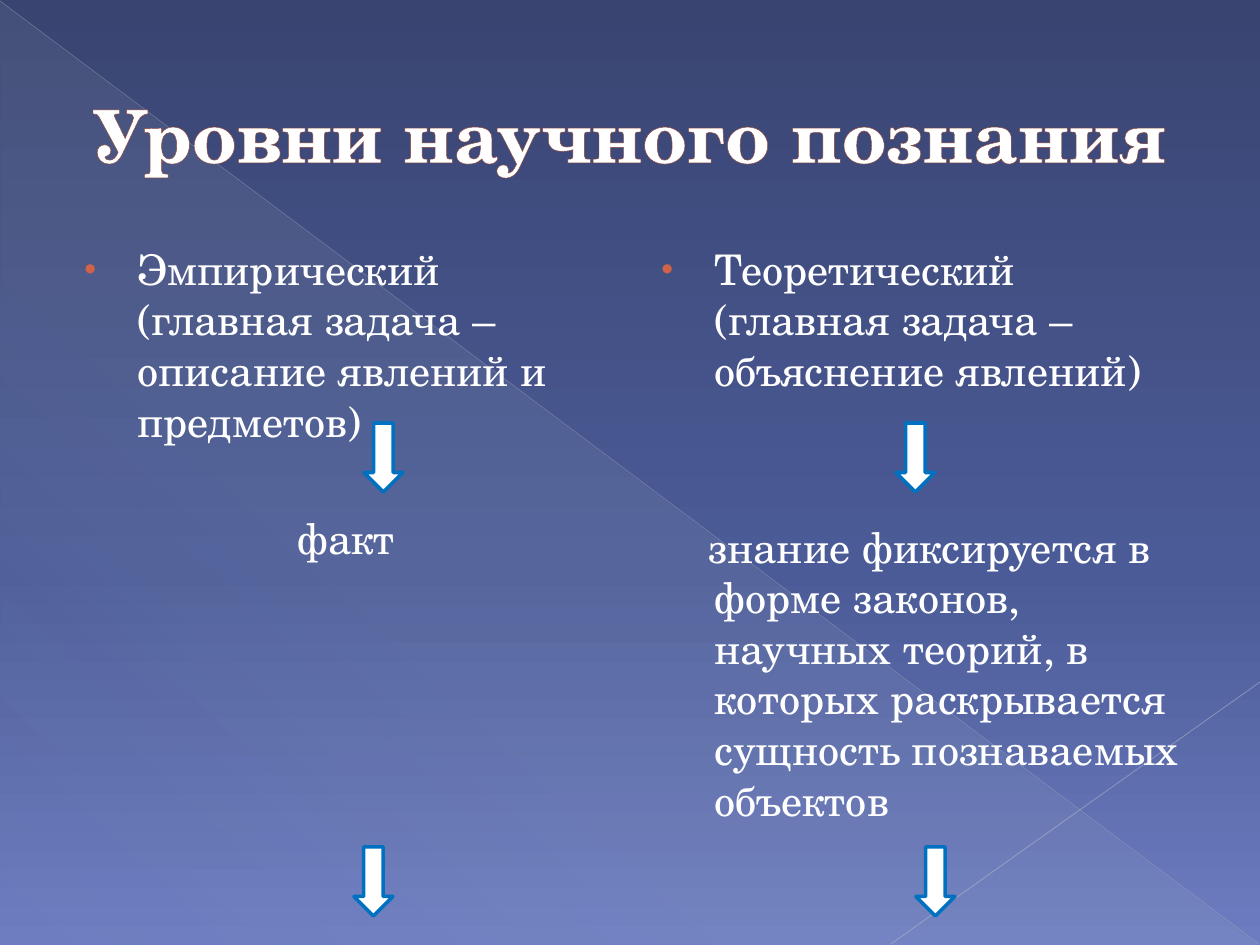
from lxml.etree import SubElement
from pptx import Presentation
from pptx.dml.color import RGBColor
from pptx.enum.shapes import MSO_CONNECTOR, MSO_SHAPE
from pptx.enum.text import MSO_ANCHOR, PP_ALIGN
from pptx.oxml.ns import qn
from pptx.util import Pt

EMU_PER_PX = 914400 / 126
FONT = "TeX Gyre Schola"
WHITE = RGBColor(0xFF, 0xFF, 0xFF)
ARROW_BLUE = RGBColor(0x00, 0x70, 0xC0)
BULLET_RED = RGBColor(0xD1, 0x63, 0x49)
TITLE_EDGE = RGBColor(0x91, 0x45, 0x33)
NIGHT = RGBColor(0x39, 0x44, 0x71)
INDIGO = RGBColor(0x4B, 0x5B, 0x97)
LAVENDER = RGBColor(0x6C, 0x7C, 0xC0)
MIST = RGBColor(0xC5, 0xD1, 0xD7)
LONG_RAY = RGBColor(0xBA, 0xBE, 0xCD)
SHORT_RAY = RGBColor(0xC2, 0xC5, 0xD2)

TITLE_FORMAT = {"name": FONT, "size": Pt(42), "bold": True}
BODY_FORMAT = {"name": FONT, "size": Pt(24.1)}
FRAME_FORMAT = {"word_wrap": True}
HANGING = {"marL": 62, "indent": -53}
FLUSH = {"marL": 62, "indent": -6}


def px(*lengths):
    return [round(length * EMU_PER_PX) for length in lengths]


def apply_format(target, values):
    for attribute, value in values.items():
        setattr(target, attribute, value)


def add_color(parent, color, opacity=100):
    swatch = SubElement(parent, qn("a:srgbClr"), val=str(color))
    if opacity < 100:
        SubElement(swatch, qn("a:alpha"), val=str(opacity * 1000))


def paint_gradient(fill, element, angle, stops):
    fill.gradient()
    fill.gradient_angle = 360 - angle
    stop_list = element.find(".//" + qn("a:gsLst"))
    for default_stop in list(stop_list):
        stop_list.remove(default_stop)
    for position, color, opacity in stops:
        stop = SubElement(stop_list, qn("a:gs"), pos=str(position * 1000))
        add_color(stop, color, opacity)


def add_glow(slide):
    glow = slide.shapes.add_shape(MSO_SHAPE.RIGHT_TRIANGLE, *px(1, 2, 1258, 943))
    glow.shadow.inherit = False
    glow.line.fill.background()
    paint_gradient(glow.fill, glow.element, 133,
                   [(0, MIST, 10), (70, MIST, 8), (100, MIST, 1)])


def add_ray(slide, ends, color, width, opacity):
    ray = slide.shapes.add_connector(MSO_CONNECTOR.STRAIGHT, *px(*ends))
    apply_format(ray.line, {"width": Pt(width)})
    ray.line.color.rgb = color
    swatch = ray.element.spPr.find(".//" + qn("a:srgbClr"))
    SubElement(swatch, qn("a:alpha"), val=str(opacity * 1000))
    SubElement(ray.element.spPr, qn("a:effectLst"))


def add_text_frame(slide, place, **extra):
    frame = slide.shapes.add_textbox(*px(*place)).text_frame
    apply_format(frame, FRAME_FORMAT | extra)
    return frame


def write_run(paragraph, text, values):
    run = paragraph.add_run()
    run.text = text
    apply_format(run.font, values)
    run.font.color.rgb = WHITE
    return run


def add_title(slide, text):
    frame = add_text_frame(slide, (63, 37, 1134, 193), vertical_anchor=MSO_ANCHOR.MIDDLE)
    heading = frame.paragraphs[0]
    heading.alignment = PP_ALIGN.CENTER
    properties = write_run(heading, text, TITLE_FORMAT).font._element
    edge = SubElement(properties, qn("a:ln"), w=str(Pt(0.5)))
    add_color(SubElement(edge, qn("a:solidFill")), TITLE_EDGE)
    properties.insert(0, edge)


def write_paragraph(paragraph, text, indents, values):
    apply_format(paragraph, values)
    properties = paragraph._p.get_or_add_pPr()
    for name, length in indents.items():
        properties.set(name, str(px(length)[0]))
    write_run(paragraph, text, BODY_FORMAT)
    return properties


def add_column(slide, left, level, result, result_indents, result_format):
    frame = add_text_frame(slide, (left, 237, 557, 624))
    properties = write_paragraph(frame.paragraphs[0], level, HANGING,
                                 {"space_before": Pt(4.8)})
    add_color(SubElement(properties, qn("a:buClr")), BULLET_RED)
    SubElement(properties, qn("a:buSzPct"), val="80000")
    SubElement(properties, qn("a:buFont"), typeface="Arial")
    SubElement(properties, qn("a:buChar"), char="•")
    write_paragraph(frame.add_paragraph(), result, result_indents, result_format)


def add_down_arrow(slide, left, top):
    arrow = slide.shapes.add_shape(MSO_SHAPE.DOWN_ARROW, *px(left, top, 39, 69))
    arrow.shadow.inherit = False
    arrow.fill.solid()
    arrow.fill.fore_color.rgb = WHITE
    arrow.line.color.rgb = ARROW_BLUE
    arrow.line.width = Pt(2)


def main():
    deck = Presentation()
    deck.slide_width, deck.slide_height = px(1260, 945)
    slide = deck.slides.add_slide(deck.slide_layouts[6])
    paint_gradient(slide.background.fill, slide.element, 90,
                   [(0, NIGHT, 100), (60, INDIGO, 100), (100, LAVENDER, 100)])
    add_glow(slide)
    add_ray(slide, (0, 1, 1259, 944), LONG_RAY, 0.39, 35)
    add_ray(slide, (1260, 682, 891, 944), SHORT_RAY, 0.47, 45)
    add_title(slide, "Уровни научного познания")
    add_column(slide, 63,
               "Эмпирический (главная задача – описание явлений и предметов)",
               "факт", HANGING,
               {"alignment": PP_ALIGN.CENTER, "space_before": Pt(38)})
    add_column(slide, 640,
               "Теоретический (главная задача – объяснение явлений)",
               "знание фиксируется в форме законов, научных теорий, "
               "в которых раскрывается сущность познаваемых объектов",
               FLUSH, {"space_before": Pt(72)})
    for top, lefts in ((423, (364, 896)), (847, (354, 916))):
        for left in lefts:
            add_down_arrow(slide, left, top)
    deck.save("out.pptx")


if __name__ == "__main__":
    main()
